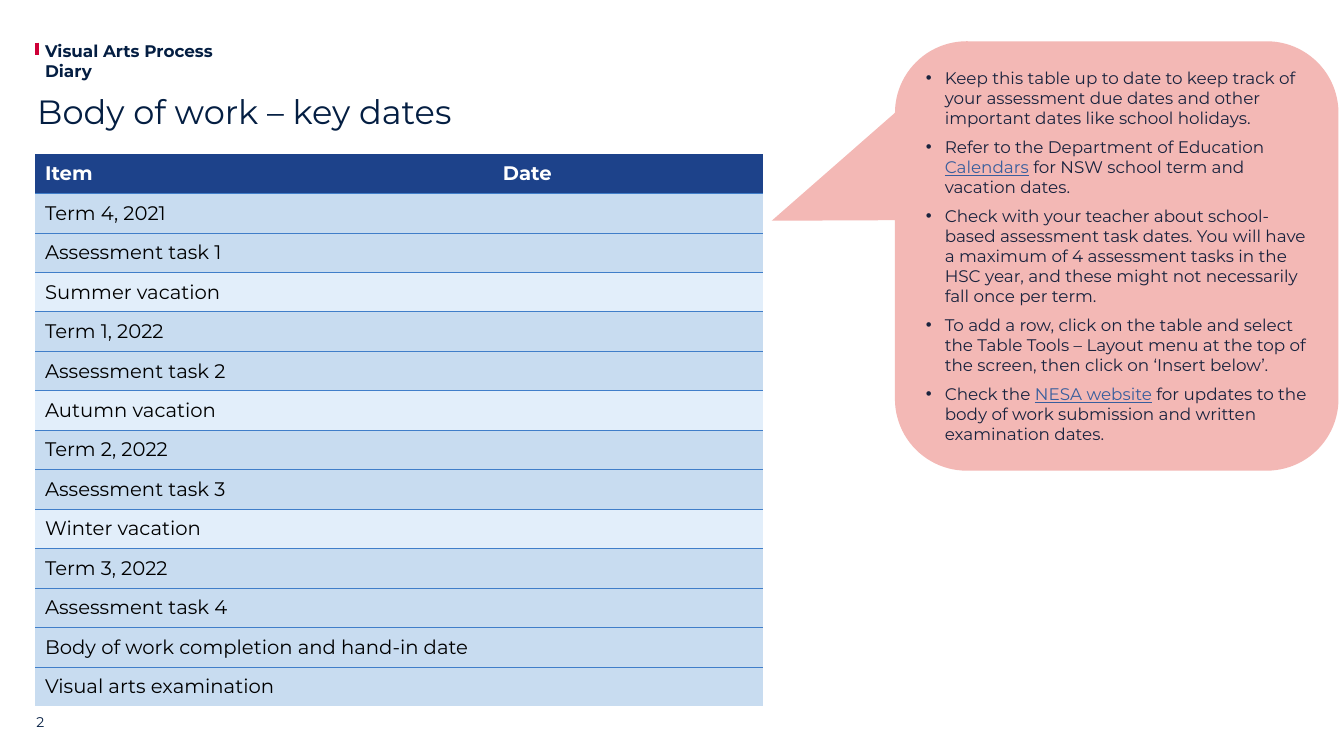
from lxml import etree
from pptx import Presentation
from pptx.dml.color import RGBColor
from pptx.enum import shapes, text
from pptx.oxml import ns
from pptx.util import Pt

# Content
HEADER = "Visual Arts Process Diary"
TITLE = "Body of work – key dates"
PAGE = "2"
COLUMNS = ["Item", "Date"]
ITEMS = [
    "Term 4, 2021", "Assessment task 1", "Summer vacation",
    "Term 1, 2022", "Assessment task 2", "Autumn vacation",
    "Term 2, 2022", "Assessment task 3", "Winter vacation",
    "Term 3, 2022", "Assessment task 4",
    "Body of work completion and hand-in date", "Visual arts examination",
]
# Each tip is a list of (words, is_link)
TIPS = [
    [("Keep this table up to date to keep track of your assessment due dates "
      "and other important dates like school holidays.", False)],
    [("Refer to the Department of Education ", False), ("Calendars", True),
     (" for NSW school term and vacation dates.", False)],
    [("Check with your teacher about school-based assessment task dates. "
      "You will have a maximum of 4 assessment tasks in the HSC year, "
      "and these might not necessarily fall once per term.", False)],
    [("To add a row, click on the table and select the Table Tools – Layout menu "
      "at the top of the screen, then click on ‘Insert below’.", False)],
    [("Check the ", False), ("NESA website", True),
     (" for updates to the body of work submission and written examination dates.", False)],
]

# Style
FONT = "Montserrat"
COLORS = {
    "navy": "041E42", "red": "CE0037", "header": "1D428A", "row": "C8DCF0",
    "vacation": "E2EEFA", "rule": "407EC9", "callout": "F3B8B5",
    "tip": "19233E", "link": "385E9D", "white": "FFFFFF", "black": "000000",
}
COLUMN_WIDTHS = [327, 193]
ROW_HEIGHT = 28.2
NO_STYLE = "{2D5ABB26-0587-4C30-8999-92F81FD0307C}"


def rgb(name):
    return RGBColor.from_string(COLORS[name])


def format_run(run, size, color, bold=False):
    run.font.name = FONT
    run.font.size = Pt(size)
    run.font.bold = bold
    run.font.color.rgb = rgb(color)


def fill_frame(frame, words, size, color, bold=False, anchor=text.MSO_ANCHOR.TOP):
    frame.margin_left = frame.margin_right = frame.margin_top = frame.margin_bottom = 0
    frame.word_wrap = True
    frame.auto_size = text.MSO_AUTO_SIZE.NONE
    frame.vertical_anchor = anchor
    frame.text = words
    frame.paragraphs[0].alignment = text.PP_ALIGN.LEFT
    format_run(frame.paragraphs[0].runs[0], size, color, bold)


def add_rule(cell, sides):
    for position, side in enumerate(sides):
        line = etree.Element(ns.qn(f"a:{side}"), w=str(Pt(0.5)))
        solid = etree.SubElement(line, ns.qn("a:solidFill"))
        etree.SubElement(solid, ns.qn("a:srgbClr"), val=COLORS["rule"])
        cell._tc.get_or_add_tcPr().insert(position, line)


def add_bullet(paragraph):
    props = paragraph._p.get_or_add_pPr()
    props.set("marL", str(Pt(13.5)))
    props.set("indent", str(-Pt(13.5)))
    etree.SubElement(props, ns.qn("a:buFont"), typeface="Arial")
    etree.SubElement(props, ns.qn("a:buChar"), char="•")


def add_header(slide):
    mark = slide.shapes.add_connector(
        shapes.MSO_CONNECTOR.STRAIGHT, Pt(26.6), Pt(30.5), Pt(26.6), Pt(39))
    mark.line.color.rgb = rgb("red")
    mark.line.width = Pt(2.5)
    etree.SubElement(mark._element.spPr, ns.qn("a:effectLst"))
    header = slide.shapes.add_textbox(Pt(32.2), Pt(29), Pt(155), Pt(14.4))
    fill_frame(header.text_frame, HEADER, 12, "navy", bold=True)

    title = slide.shapes.title
    title.left, title.top, title.width, title.height = Pt(26.6), Pt(61), Pt(893.5), Pt(39.6)
    fill_frame(title.text_frame, TITLE, 24, "navy", anchor=text.MSO_ANCHOR.MIDDLE)
    title.text_frame.paragraphs[0].line_spacing = 0.9


def add_dates_table(slide):
    rows = [COLUMNS] + [[item, ""] for item in ITEMS]
    dates = slide.shapes.add_table(
        len(rows), len(COLUMNS), Pt(25), Pt(110),
        Pt(sum(COLUMN_WIDTHS)), Pt(ROW_HEIGHT * len(rows))).table
    dates._tbl.tblPr.find(ns.qn("a:tableStyleId")).text = NO_STYLE
    dates.horz_banding = False
    for column, width in zip(dates.columns, COLUMN_WIDTHS):
        column.width = Pt(width)

    last = len(rows) - 1
    for r, row in enumerate(rows):
        dates.rows[r].height = Pt(ROW_HEIGHT)
        is_header = r == 0
        if is_header:
            shade = "header"
        else:
            shade = "vacation" if row[0].endswith("vacation") else "row"
        sides = (["lnT"] if r > 0 else []) + (["lnB"] if r < last else [])
        for c, words in enumerate(row):
            cell = dates.cell(r, c)
            cell.fill.solid()
            cell.fill.fore_color.rgb = rgb(shade)
            cell.vertical_anchor = text.MSO_ANCHOR.MIDDLE
            cell.margin_top = cell.margin_bottom = 0
            add_rule(cell, sides)
            if words:
                cell.text_frame.text = words
                format_run(cell.text_frame.paragraphs[0].runs[0], 14,
                           "white" if is_header else "black", is_header)


def add_tips(slide):
    callout = slide.shapes.add_shape(
        shapes.MSO_SHAPE.ROUNDED_RECTANGULAR_CALLOUT, Pt(639.3), Pt(29.5), Pt(316.8), Pt(306.7))
    for index, value in enumerate([-0.778, -0.082, 0.167]):
        callout.adjustments[index] = value
    callout.shadow.inherit = False
    callout.fill.solid()
    callout.fill.fore_color.rgb = rgb("callout")
    callout.line.fill.background()

    frame = callout.text_frame
    frame.word_wrap = True
    frame.vertical_anchor = text.MSO_ANCHOR.MIDDLE
    for index, tip in enumerate(TIPS):
        paragraph = frame.add_paragraph() if index else frame.paragraphs[0]
        paragraph.alignment = text.PP_ALIGN.LEFT
        paragraph.space_after = Pt(6)
        add_bullet(paragraph)
        for words, is_link in tip:
            run = paragraph.add_run()
            run.text = words
            format_run(run, 12, "link" if is_link else "tip")
            run.font.underline = is_link


def main():
    deck = Presentation()
    deck.slide_width, deck.slide_height = Pt(960), Pt(540)
    slide = deck.slides.add_slide(deck.slide_layouts.get_by_name("Title Only"))
    add_header(slide)
    add_dates_table(slide)
    add_tips(slide)
    page = slide.shapes.add_textbox(Pt(26), Pt(493.2), Pt(32.4), Pt(28.8))
    fill_frame(page.text_frame, PAGE, 10, "navy", anchor=text.MSO_ANCHOR.BOTTOM)
    deck.save("out.pptx")


if __name__ == "__main__":
    main()
